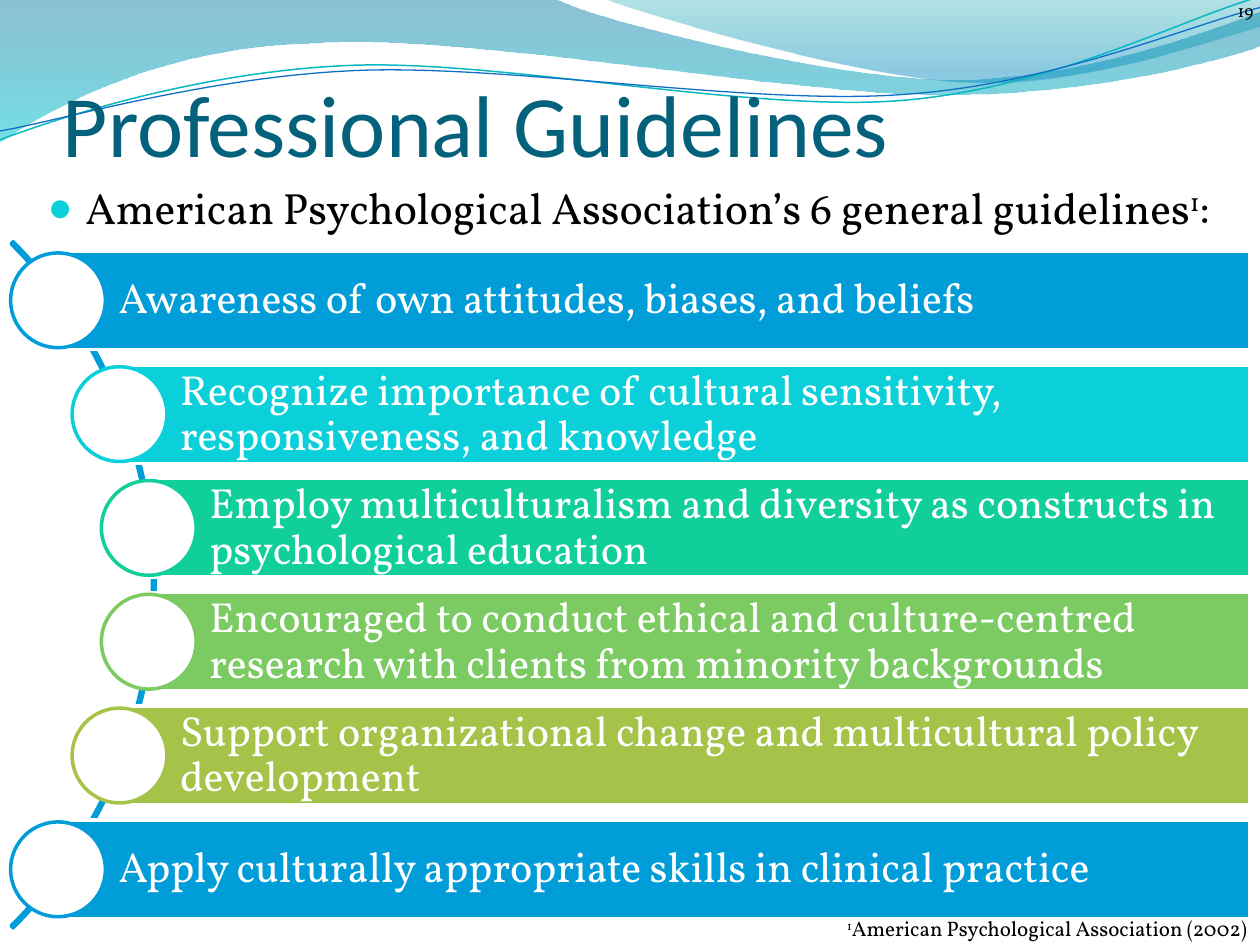
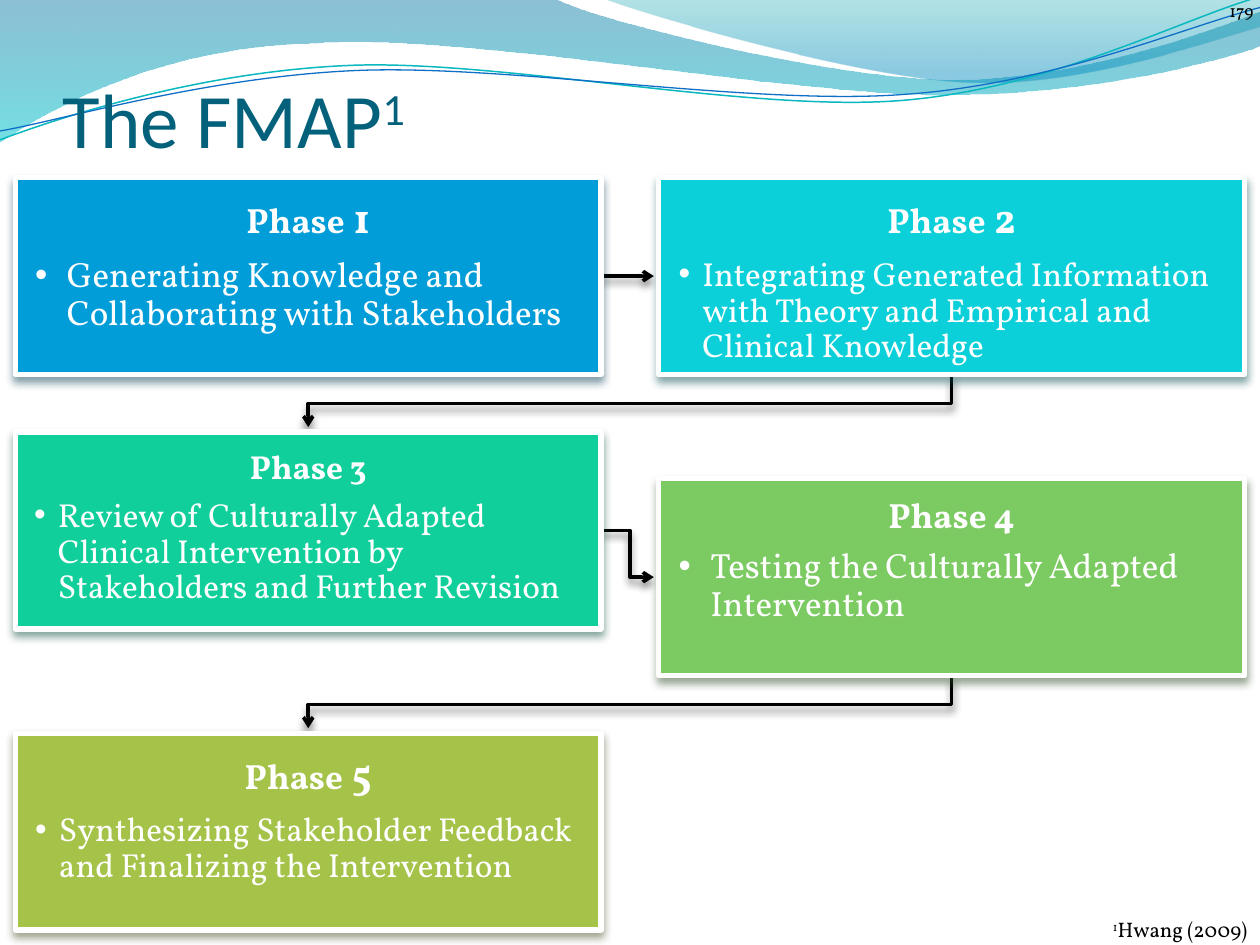
from dataclasses import dataclass

from lxml import etree
from pptx import Presentation
from pptx.dml.color import RGBColor
from pptx.enum.shapes import MSO_CONNECTOR, MSO_SHAPE
from pptx.enum.text import MSO_ANCHOR, PP_ALIGN
from pptx.oxml.ns import qn
from pptx.util import Cm, Pt

RECTANGLE, OVAL, ARC = MSO_SHAPE.RECTANGLE, MSO_SHAPE.OVAL, MSO_SHAPE.BLOCK_ARC
STRAIGHT, ELBOW = MSO_CONNECTOR.STRAIGHT, MSO_CONNECTOR.ELBOW
LEFT, CENTER, RIGHT = PP_ALIGN.LEFT, PP_ALIGN.CENTER, PP_ALIGN.RIGHT
TOP, MIDDLE, BOTTOM = MSO_ANCHOR.TOP, MSO_ANCHOR.MIDDLE, MSO_ANCHOR.BOTTOM


@dataclass(frozen=True)
class Theme:
    heading_font: str = "Calibri"
    body_font: str = "Vollkorn"
    heading: str = "04617B"
    ink: str = "000000"
    paper: str = "FFFFFF"
    blue: str = "009DD9"
    cyan: str = "0BD0D9"
    teal: str = "10CF9B"
    green: str = "7CCA62"
    olive: str = "A5C249"
    lead_size: int = 25
    row_size: int = 24
    note_size: int = 12
    number_size: int = 10


THEME = Theme()

WAVE_UNIT = Cm(2.54) / 1000
WAVE_BANDS = [
    ("LCCLCCCL",
     [(0, 0), (4.4, -0.01),
      (4.76, 0.17), (6.64, 0.63), (7.58, 0.63), (8.53, 0.63), (9.58, 0.26), (10, 0.09),
      (10.01, 0.36),
      (9.83, 0.44), (8.7, 0.76), (7.46, 0.75), (6.22, 0.75), (3.82, 0.28), (2.57, 0.34),
      (1.29, 0.36), (0.46, 0.83), (-0.01, 1.13), (0, 0)],
     [(0, "0074A1", 45), (1, "00C6CF", 55)]),
    ("CCLL",
     [(4.79, -0.01),
      (5.09, 0.11), (6.82, 0.62), (7.69, 0.65), (8.56, 0.69), (9.61, 0.32), (10, 0.21),
      (10, 0), (4.79, -0.01)],
     [(0, "00A1A9", 30), (0.8, "008BBF", 45)]),
]
WAVE_LINES = [
    ([(0, 1.11),
      (0.48, 0.93), (1.58, 0.57), (2.77, 0.52), (3.95, 0.47), (5.93, 0.89), (7.13, 0.8),
      (8.33, 0.71), (9.38, 0.15), (9.98, -0.02)], "0AB8BF", 0.85),
    ([(0, 1.04),
      (0.47, 0.96), (1.64, 0.61), (2.83, 0.56), (4.03, 0.51), (5.97, 0.84), (7.17, 0.75),
      (8.36, 0.67), (9.41, 0.21), (10, 0.06)], "0F6FC6", 0.75),
]

GUIDELINES = [
    ("Awareness of own attitudes, biases, and beliefs", 1.17, THEME.blue),
    ("Recognize importance of cultural sensitivity, responsiveness, and knowledge",
     2.41, THEME.cyan),
    ("Employ multiculturalism and diversity as constructs in psychological education",
     3.0, THEME.teal),
    ("Encouraged to conduct ethical and culture-centred research with clients from "
     "minority backgrounds", 3.0, THEME.green),
    ("Support organizational change and multicultural policy development",
     2.41, THEME.olive),
    ("Apply culturally appropriate skills in clinical practice", 1.17, THEME.blue),
]
ROW_TOP, LAST_ROW_TOP, ROW_HEIGHT, ROW_RIGHT = 5.06, 16.53, 1.99, 25.2
ROW_PITCH = (LAST_ROW_TOP - ROW_TOP) / (len(GUIDELINES) - 1)
CIRCLE = 1.91

CARD_WIDTH, CARD_HEIGHT = 11.81, 3.97
COLUMNS = (0.31, 13.28)
ARROW_GAP = 0.1
BEND = 0.55
PHASES = [
    ("Generating Knowledge and Collaborating with Stakeholders",
     0, 3.58, THEME.blue, (20, 24, 20), 0.64),
    ("Integrating Generated Information with Theory and Empirical and Clinical Knowledge",
     1, 3.58, THEME.cyan, (20, 24, 19), 0.48),
    ("Review of Culturally Adapted Clinical Intervention by Stakeholders and Further Revision",
     0, 8.71, THEME.teal, (19, 19, 19), 0.48),
    ("Testing the Culturally Adapted Intervention",
     1, 9.65, THEME.green, (20, 20, 20), 0.64),
    ("Synthesizing Stakeholder Feedback and Finalizing the Intervention",
     0, 14.78, THEME.olive, (20, 24, 19), 0.48),
]


def add_xml(parent, tag, **attributes):
    return etree.SubElement(parent, qn(tag), {k: str(v) for k, v in attributes.items()})


def set_effects(item, shadow=None):
    effects = add_xml(item._element.spPr, "a:effectLst")
    if shadow:
        outer = add_xml(effects, "a:outerShdw", blurRad=Pt(4.5), dist=Pt(3),
                        dir=5400000, algn="ctr", rotWithShape=0)
        color = add_xml(outer, "a:srgbClr", val=shadow)
        add_xml(color, "a:alpha", val=48000)


def set_line(item, color, width):
    item.line.color.rgb = RGBColor.from_string(color)
    item.line.width = Pt(width)


def add_preset(page, kind, place, fill, line, width, shadow=None):
    shape = page.shapes.add_shape(kind, *map(Cm, place))
    if fill:
        shape.fill.solid()
        shape.fill.fore_color.rgb = RGBColor.from_string(fill)
    else:
        shape.fill.background()
    set_line(shape, line, width)
    set_effects(shape, shadow)
    return shape


def set_frame(shape, anchor=TOP, insets=(0.25, 0.13, 0.25, 0.13)):
    frame = shape.text_frame
    frame.word_wrap = True
    frame.vertical_anchor = anchor
    frame.margin_left, frame.margin_top, frame.margin_right, frame.margin_bottom = map(Cm, insets)
    return frame


def add_text_box(page, place, anchor=TOP, insets=(0.25, 0.13, 0.25, 0.13)):
    return set_frame(page.shapes.add_textbox(*map(Cm, place)), anchor, insets)


def add_span(para, text, size, color, font=THEME.body_font, bold=False, raised=False):
    span = para.add_run()
    span.text = text
    span.font.size = Pt(size)
    span.font.name = font
    span.font.bold = bold
    span.font.color.rgb = RGBColor.from_string(color)
    if raised:
        span._r.get_or_add_rPr().set("baseline", "30000")


def set_bullet(para, symbol, indent, color, percent=100):
    properties = para._p.get_or_add_pPr()
    properties.set("marL", str(Cm(indent)))
    properties.set("indent", str(-Cm(indent)))
    add_xml(add_xml(properties, "a:buClr"), "a:srgbClr", val=color)
    add_xml(properties, "a:buSzPct", val=percent * 1000)
    add_xml(properties, "a:buFont", typeface="Arial")
    add_xml(properties, "a:buChar", char=symbol)


def add_outline(page, points, unit, close=False):
    scaled = [(x * 1000, y * 1000) for x, y in points]
    builder = page.shapes.build_freeform(*scaled[0], scale=unit)
    builder.add_line_segments(scaled[1:], close=close)
    return builder.convert_to_shape()


def bend_segments(outline, segments):
    steps = iter(list(outline._element.iter(qn("a:lnTo"))))
    for segment in segments:
        step = next(steps)
        if segment == "C":
            curve = etree.Element(qn("a:cubicBezTo"))
            step.addprevious(curve)
            for corner in (step, next(steps), next(steps)):
                curve.append(corner[0])
                corner.getparent().remove(corner)


def add_waves(page):
    for segments, points, stops in WAVE_BANDS:
        band = add_outline(page, points, WAVE_UNIT, close=True)
        bend_segments(band, segments)
        band.fill.gradient()
        band.fill.gradient_angle = 270
        for stop, (position, color, opacity) in zip(band.fill.gradient_stops, stops):
            stop.position = position
            stop.color.rgb = RGBColor.from_string(color)
            add_xml(stop._gs[0], "a:alpha", val=opacity * 1000)
        band.line.fill.background()
        set_effects(band)
    for points, color, width in WAVE_LINES:
        wave = add_outline(page, points, WAVE_UNIT)
        bend_segments(wave, "CCC")
        wave.fill.background()
        set_line(wave, color, width)
        set_effects(wave)


def add_page(deck, number, title, size, title_top, raised=""):
    page = deck.slides.add_slide(deck.slide_layouts[6])
    add_waves(page)
    para = add_text_box(page, (23.16, -0.06, 2.11, 0.48), BOTTOM, (0, 0, 0, 0)).paragraphs[0]
    para.alignment = RIGHT
    add_span(para, number, THEME.number_size, THEME.ink)
    para = add_text_box(page, (1.27, title_top, 22.86, 3.18), BOTTOM,
                        (0, 0.13, 0, 0)).paragraphs[0]
    add_span(para, title, size, THEME.heading, THEME.heading_font)
    if raised:
        add_span(para, raised, size, THEME.heading, THEME.heading_font, raised=True)
    return page


def add_footnote(page, text, top):
    para = add_text_box(page, (0, top, 25.4, 0.76)).paragraphs[0]
    para.alignment = RIGHT
    add_span(para, "1", THEME.note_size, THEME.ink, raised=True)
    add_span(para, text, THEME.note_size, THEME.ink)


def add_lead(page):
    para = add_text_box(page, (0.71, 3.51, 24, 13.64)).paragraphs[0]
    set_bullet(para, "●", 0.76, THEME.cyan, 95)
    for text, raised in (("American Psychological Association’s 6 general guidelines", False),
                         ("1", True), (":", False)):
        add_span(para, text, THEME.lead_size, THEME.ink, raised=raised)


def add_guideline(page, index, text, left, color):
    top = ROW_TOP + index * ROW_PITCH
    row = add_preset(page, RECTANGLE, (left, top, ROW_RIGHT - left, ROW_HEIGHT),
                     color, THEME.paper, 2)
    para = set_frame(row, MIDDLE, (1.22, 0.18, 0.18, 0.18)).paragraphs[0]
    para.alignment = LEFT
    para.line_spacing = 0.9
    add_span(para, text, THEME.row_size, THEME.paper)
    add_preset(page, OVAL, (left - CIRCLE / 2, top + (ROW_HEIGHT - CIRCLE) / 2, CIRCLE, CIRCLE),
               THEME.paper, color, 2)


def add_phase(page, number, text, column, top, color, sizes, indent):
    label_size, number_size, text_size = sizes
    shade = "".join(f"{round(channel * 0.35):02X}" for channel in RGBColor.from_string(color))
    card = add_preset(page, RECTANGLE, (COLUMNS[column], top, CARD_WIDTH, CARD_HEIGHT),
                      color, THEME.paper, 3, shade)
    frame = set_frame(card, TOP, [0.02 * label_size] * 4)
    label = frame.paragraphs[0]
    label.alignment = CENTER
    label.line_spacing = 0.9
    label.space_after = Pt(0.35 * number_size)
    add_span(label, "Phase", label_size, THEME.paper, bold=True)
    add_span(label, f" {number}", number_size, THEME.paper, bold=True)
    para = frame.add_paragraph()
    para.alignment = LEFT
    para.line_spacing = 0.9
    add_span(para, text, text_size, THEME.paper)
    set_bullet(para, "•", indent, THEME.paper)


def finish_arrow(arrow):
    set_line(arrow, THEME.ink, 2)
    add_xml(arrow.line._get_or_add_ln(), "a:tailEnd", type="arrow")
    set_effects(arrow, THEME.ink)


def add_arrow_across(page, top_from, top_to):
    kind = STRAIGHT if top_from == top_to else ELBOW
    half = CARD_HEIGHT / 2
    ends = (COLUMNS[0] + CARD_WIDTH, top_from + half, COLUMNS[1] - ARROW_GAP, top_to + half)
    arrow = page.shapes.add_connector(kind, *map(Cm, ends))
    if kind == ELBOW:
        guides = next(arrow._element.iter(qn("a:avLst")))
        add_xml(guides, "a:gd", name="adj1", fmla=f"val {round(BEND * 100000)}")
    finish_arrow(arrow)


def add_arrow_back(page, top_from, top_to):
    left, right = (column + CARD_WIDTH / 2 for column in COLUMNS)
    start, end = top_from + CARD_HEIGHT, top_to - ARROW_GAP
    bend = start + BEND * (end - start)
    arrow = add_outline(page, [(right, start), (right, bend), (left, bend), (left, end)],
                        Cm(1) / 1000)
    arrow.fill.background()
    finish_arrow(arrow)


def build_guidelines(deck):
    page = add_page(deck, "19", "Professional Guidelines", 50, 0.34)
    add_lead(page)
    add_footnote(page, "American Psychological Association (2002)", 18.33)
    arc = add_preset(page, ARC, (-16.43, 2.01, 19.56, 19.56), None, THEME.blue, 2)
    for index, value in enumerate((189, 27, 0.003)):
        arc.adjustments[index] = value
    for index, guideline in enumerate(GUIDELINES):
        add_guideline(page, index, *guideline)


def build_phases(deck):
    page = add_page(deck, "179", "The FMAP", 44, 0.13, raised="1")
    tops = [phase[2] for phase in PHASES]
    for index, (top_from, top_to) in enumerate(zip(tops, tops[1:])):
        add_arrow = add_arrow_back if index % 2 else add_arrow_across
        add_arrow(page, top_from, top_to)
    for number, phase in enumerate(PHASES, 1):
        add_phase(page, number, *phase)
    add_footnote(page, "Hwang (2009)", 18.35)


def main():
    deck = Presentation()
    deck.slide_width, deck.slide_height = Cm(25.4), Cm(19.05)
    build_guidelines(deck)
    build_phases(deck)
    deck.save("out.pptx")


if __name__ == "__main__":
    main()
